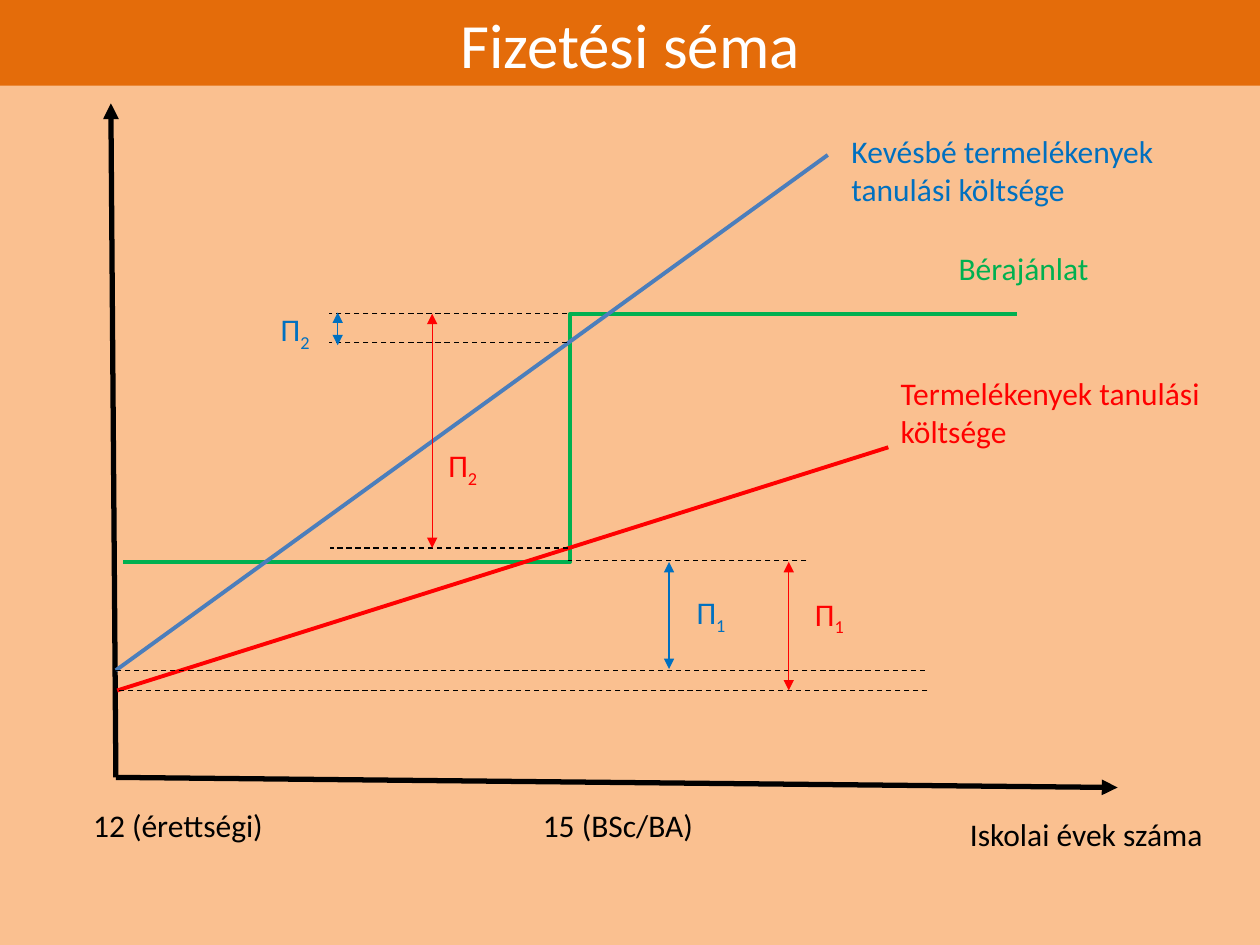
from dataclasses import dataclass

from lxml.etree import SubElement
from pptx import Presentation
from pptx.dml.color import RGBColor
from pptx.enum.dml import MSO_LINE
from pptx.enum.shapes import MSO_CONNECTOR, MSO_SHAPE
from pptx.enum.text import MSO_ANCHOR, MSO_AUTO_SIZE, PP_ALIGN
from pptx.oxml.ns import qn
from pptx.util import Inches, Pt


@dataclass(frozen=True)
class Theme:
    """Colours, font and sizes of the slide."""
    background: str = "FAC090"
    banner: str = "E46C0A"
    white: str = "FFFFFF"
    black: str = "000000"
    wage: str = "00B050"
    low_cost_line: str = "4B7EBC"
    low: str = "0070C0"
    high: str = "FF0000"
    font: str = "Calibri"
    title_size: int = 36
    label_size: int = 18
    axis_width: float = 3
    curve_width: float = 2.25
    thin_width: float = 0.75


@dataclass(frozen=True)
class Box:
    """A region of the slide, in inches."""
    left: float
    top: float
    width: float
    height: float

    def at(self, x, y):
        """Return the slide position of a point inside the box."""
        return Inches(self.left + x), Inches(self.top + y)


THEME = Theme()


def style_run(run, size, color):
    """Set the font, size and colour of a run."""
    run.font.name = THEME.font
    run.font.size = Pt(size)
    run.font.color.rgb = RGBColor.from_string(color)


def add_line(slide, box, start, end, color, width, ends=(), dashed=False,
             kind=MSO_CONNECTOR.STRAIGHT):
    """Draw a connector between two points of the box."""
    connector = slide.shapes.add_connector(kind, *box.at(*start), *box.at(*end))
    connector.line.color.rgb = RGBColor.from_string(color)
    connector.line.width = Pt(width)
    if dashed:
        connector.line.dash_style = MSO_LINE.DASH
    properties = connector.element.spPr
    for end_name in ends:
        SubElement(properties.get_or_add_ln(), qn(f"a:{end_name}"), type="triangle")
    SubElement(properties, qn("a:effectLst"))


def add_label(slide, box, position, width, text, color, subscript="", height=0.4):
    """Write a label, with an optional subscript, at a point of the box."""
    label = slide.shapes.add_textbox(*box.at(*position), Inches(width), Inches(height))
    frame = label.text_frame
    frame.word_wrap = True
    frame.auto_size = MSO_AUTO_SIZE.SHAPE_TO_FIT_TEXT
    paragraph = frame.paragraphs[0]
    paragraph.text = text
    if subscript:
        index = paragraph.add_run()
        index.text = subscript
        index.font._element.set("baseline", "-25000")
    for run in paragraph.runs:
        style_run(run, THEME.label_size, color)


def add_banner(slide, box, text):
    """Fill the box with the title banner."""
    banner = slide.shapes.add_shape(MSO_SHAPE.RECTANGLE, *box.at(0, 0),
                                    Inches(box.width), Inches(box.height))
    banner.shadow.inherit = False
    banner.fill.solid()
    banner.fill.fore_color.rgb = RGBColor.from_string(THEME.banner)
    banner.line.fill.background()
    frame = banner.text_frame
    frame.text = text
    frame.vertical_anchor = MSO_ANCHOR.MIDDLE
    title = frame.paragraphs[0]
    title.alignment = PP_ALIGN.CENTER
    style_run(title.runs[0], THEME.title_size, THEME.white)


def add_axes(slide, box):
    """Draw both axes and their captions."""
    origin = (0.42, 5.49)
    for tip in ((8.37, 5.57), (0.38, 0.14)):
        add_line(slide, box, origin, tip, THEME.black, THEME.axis_width, ["tailEnd"])
    captions = [
        ((7.1, 5.74), 2.46, "Iskolai évek száma"),
        ((0.14, 5.67), 2.08, "12 (érettségi)"),
        ((3.71, 5.67), 1.57, "15 (BSc/BA)"),
    ]
    for position, width, text in captions:
        add_label(slide, box, position, width, text, THEME.black)


def add_curves(slide, box):
    """Draw the wage offer and the two learning cost lines with their names."""
    add_line(slide, box, (0.48, 3.78), (7.57, 1.81), THEME.wage, THEME.curve_width,
             kind=MSO_CONNECTOR.ELBOW)
    add_line(slide, box, (0.42, 4.64), (6.07, 0.55), THEME.low_cost_line,
             THEME.curve_width)
    add_line(slide, box, (0.43, 4.8), (6.55, 2.87), THEME.high, THEME.curve_width)
    add_label(slide, box, (7.01, 1.25), 1.37, "Bérajánlat", THEME.wage)
    add_label(slide, box, (6.16, 0.32), 2.67,
              "Kevésbé termelékenyek tanulási költsége", THEME.low, height=0.71)
    add_label(slide, box, (6.55, 2.24), 2.68,
              "Termelékenyek tanulási költsége", THEME.high, height=0.71)


def add_guides(slide, box):
    """Draw the dashed levels that bound the gains."""
    guides = [
        (4, 2.11, 1.81), (4, 2.11, 2.04), (4.01, 2.12, 3.67),
        (6.86, 0.43, 4.8), (6.84, 0.41, 4.64), (5.9, 4.01, 3.77),
    ]
    for right, left, level in guides:
        add_line(slide, box, (right, level), (left, level), THEME.black,
                 THEME.thin_width, dashed=True)


def add_gains(slide, box):
    """Draw the double arrows of the gains with their symbols."""
    gains = [
        (4.81, 3.78, 4.63, (4.93, 3.98), "1", THEME.low),
        (2.18, 1.8, 2.06, (1.63, 1.73), "2", THEME.low),
        (5.76, 3.78, 4.8, (5.87, 3.99), "1", THEME.high),
        (2.93, 1.81, 3.67, (2.96, 2.81), "2", THEME.high),
    ]
    for x, top, bottom, position, index, color in gains:
        add_line(slide, box, (x, top), (x, bottom), color, THEME.thin_width,
                 ["headEnd", "tailEnd"])
        add_label(slide, box, position, 1.37, "Π", color, index)


def add_diagram(slide, box):
    """Build the payment scheme diagram inside the box."""
    for add_part in (add_axes, add_curves, add_guides, add_gains):
        add_part(slide, box)


def main():
    """Build and save the slide."""
    presentation = Presentation()
    presentation.slide_width = Inches(10)
    presentation.slide_height = Inches(7.5)
    slide = presentation.slides.add_slide(presentation.slide_layouts[6])
    slide.background.fill.solid()
    slide.background.fill.fore_color.rgb = RGBColor.from_string(THEME.background)
    add_banner(slide, Box(0, 0, 10, 0.68), "Fizetési séma")
    add_diagram(slide, Box(0.5, 0.68, 9.5, 6.82))
    presentation.save("out.pptx")


if __name__ == "__main__":
    main()
